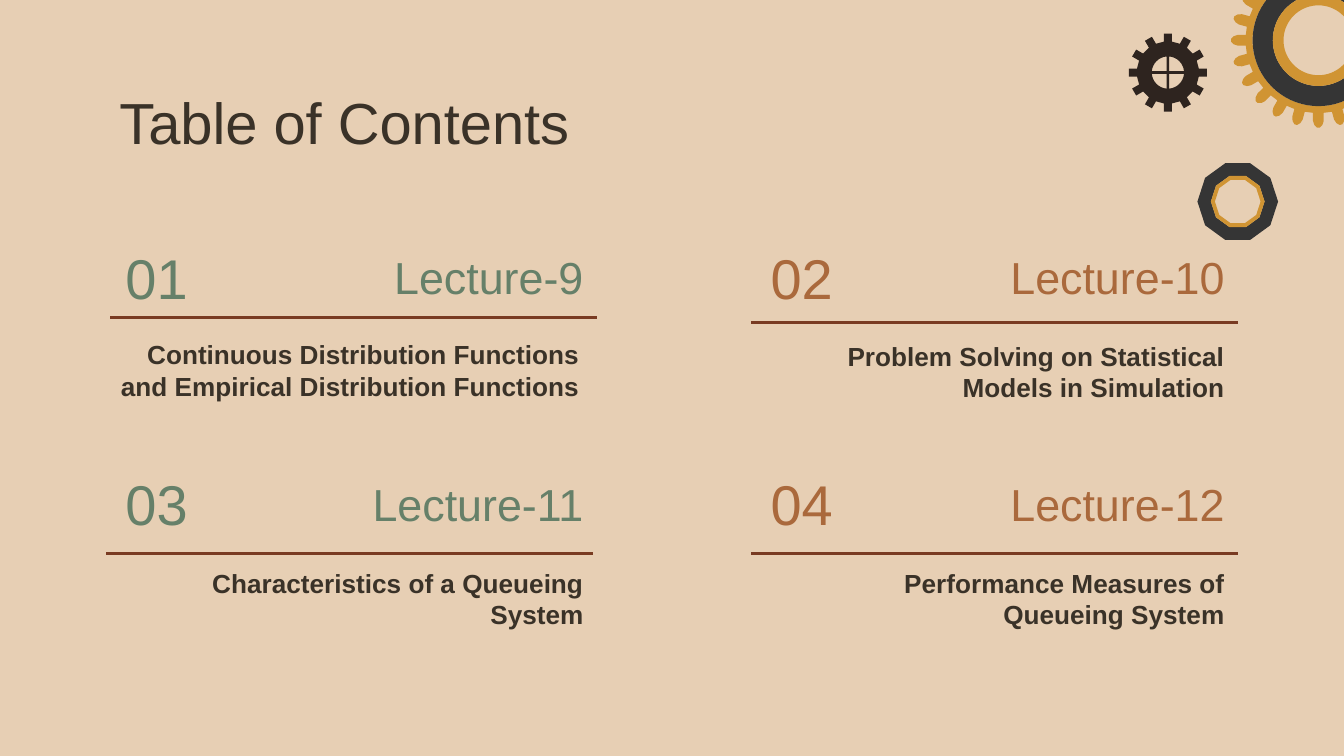
from dataclasses import dataclass
from math import asin, cos, pi, sin

from lxml.etree import SubElement
from pptx import Presentation
from pptx.dml.color import RGBColor as Rgb
from pptx.enum.shapes import MSO_CONNECTOR as Link
from pptx.enum.text import MSO_ANCHOR as Anchor, PP_ALIGN as Align
from pptx.oxml.ns import qn
from pptx.util import Inches, Pt

SAND, INK, RUST = "E7CFB4", "3A3228", "793B22"
GREEN, COPPER = "668069", "AA693C"
GOLD, COAL, DARK = "D09433", "353535", "2E241F"

Spot = tuple[float, float]
Path = list[Spot]


@dataclass
class Card:
    num: str
    name: str
    lines: list[str]
    left: float
    top: float
    hue: str
    head: Spot
    rule: Spot
    body: Spot
    width: float = 3.62


@dataclass
class Ring:
    mid: Spot
    outer: float
    inner: float
    sides: int
    hue: str


def paint(item, hue: str) -> None:
    item.solid()
    item.fore_color.rgb = Rgb.from_string(hue)


def turn(mid: Spot, out: float, side: float, angle: float) -> Spot:
    return (mid[0] + out * cos(angle) - side * sin(angle),
            mid[1] + out * sin(angle) + side * cos(angle))


def arc(mid: Spot, size: float, start: float, end: float, steps: int) -> Path:
    return [turn(mid, size, 0, start + (end - start) * i / steps)
            for i in range(steps + 1)]


def loop(mid: Spot, size: float, sides: int) -> Path:
    return arc(mid, size, 0, 2 * pi, sides)[:-1]


def cog(mid: Spot, teeth: int, half: Path) -> Path:
    tooth = [(out, -side) for out, side in half] + half[::-1]
    return [turn(mid, out, side, 2 * pi * i / teeth)
            for i in range(teeth) for out, side in tooth]


def panes(mid: Spot, size: float, gap: float) -> list[Path]:
    edge = asin(gap / size)
    return [[turn(mid, gap, gap, i * pi / 2)]
            + arc(mid, size, i * pi / 2 + edge, (i + 1) * pi / 2 - edge, 8)
            for i in range(4)]


def draw(slide, paths: list[Path], hue: str) -> None:
    spots = [[(Inches(x), Inches(y)) for x, y in path] for path in paths]
    pen = slide.shapes.build_freeform(*spots[0][0])
    pen.add_line_segments(spots[0][1:], close=True)
    for path in spots[1:]:
        pen.move_to(*path[0])
        pen.add_line_segments(path[1:], close=True)
    shape = pen.convert_to_shape()
    shape.shadow.inherit = False
    shape.line.fill.background()
    paint(shape.fill, hue)


def write(slide, lines: list[str], left: float, top: float, width: float,
          height: float, size: float, hue: str, align: Align,
          body: bool = False) -> None:
    box = slide.shapes.add_textbox(Inches(left), Inches(top),
                                   Inches(width), Inches(height))
    frame = box.text_frame
    frame.word_wrap = True
    frame.vertical_anchor = Anchor.TOP if body else Anchor.MIDDLE
    frame.margin_left = frame.margin_right = Inches(0.1)
    frame.margin_top = frame.margin_bottom = Inches(0.1)
    for i, line in enumerate(lines):
        para = frame.add_paragraph() if i else frame.paragraphs[0]
        para.alignment = align
        if body:
            props = para._p.get_or_add_pPr()
            props.set("marL", str(Inches(0.5)))
            props.set("indent", str(Inches(-0.35)))
        run = para.add_run()
        run.text = line
        run.font.name = "Arial"
        run.font.size = Pt(size)
        run.font.bold = body
        run.font.color.rgb = Rgb.from_string(hue)


def rule(slide, left: float, top: float) -> None:
    line = slide.shapes.add_connector(Link.STRAIGHT, Inches(left + 3.62),
                                      Inches(top), Inches(left), Inches(top))
    line.line.width = Pt(1.5)
    paint(line.line.fill, RUST)
    SubElement(line._element.spPr, qn("a:effectLst"))


def deal(slide, card: Card) -> None:
    write(slide, [card.num], card.left, card.top, 0.75, 0.65, 30,
          card.hue, Align.CENTER)
    write(slide, [card.name], *card.head, 2.86, 0.58, 24, card.hue,
          Align.RIGHT)
    write(slide, card.lines, *card.body, card.width, 0.65, 14, INK,
          Align.RIGHT, body=True)
    rule(slide, *card.rule)


def main() -> None:
    deck = Presentation()
    deck.slide_width = Inches(10)
    deck.slide_height = deck.slide_width * 9 // 16
    slide = deck.slides.add_slide(deck.slide_layouts[6])
    paint(slide.background.fill, SAND)

    small, big, nut = (8.69, 0.54), (9.81, 0.3), (9.21, 1.5)
    draw(slide, [cog(small, 12, [(0.23, 0.03), (0.29, 0.03)])]
         + panes(small, 0.12, 0.01), DARK)
    draw(slide, [cog(big, 24, [(0.54, 0.04), (0.6, 0.04), (0.63, 0.03),
                               (0.65, 0.01)]), loop(big, 0.49, 72)], GOLD)
    for ring in (Ring(big, 0.49, 0.34, 72, COAL),
                 Ring(big, 0.34, 0.26, 72, GOLD),
                 Ring(nut, 0.3, 0.2, 10, COAL),
                 Ring(nut, 0.2, 0.17, 10, GOLD)):
        draw(slide, [loop(ring.mid, ring.outer, ring.sides),
                     loop(ring.mid, ring.inner, ring.sides)], ring.hue)

    write(slide, ["Table of Contents"], 0.79, 0.59, 8.43, 0.62, 31, INK,
          Align.LEFT)
    west, east, high, low = 0.79, 5.59, 1.74, 3.42
    cards = [
        Card("01", "Lecture-9", ["Continuous Distribution Functions",
                                 "and Empirical Distribution Functions"],
             west, high, GREEN, (1.58, 1.77), (0.82, 2.36), (0.32, 2.42),
             4.09),
        Card("02", "Lecture-10",
             ["Problem Solving on Statistical Models in Simulation"],
             east, high, COPPER, (6.35, 1.77), (east, 2.4), (east, 2.43)),
        Card("03", "Lecture-11", ["Characteristics of a Queueing System"],
             west, low, GREEN, (1.58, 3.46), (west, 4.12), (0.82, 4.12)),
        Card("04", "Lecture-12", ["Performance Measures of Queueing System"],
             east, low, COPPER, (6.35, 3.46), (east, 4.12), (east, 4.12)),
    ]
    for card in cards:
        deal(slide, card)
    deck.save("out.pptx")


if __name__ == "__main__":
    main()
